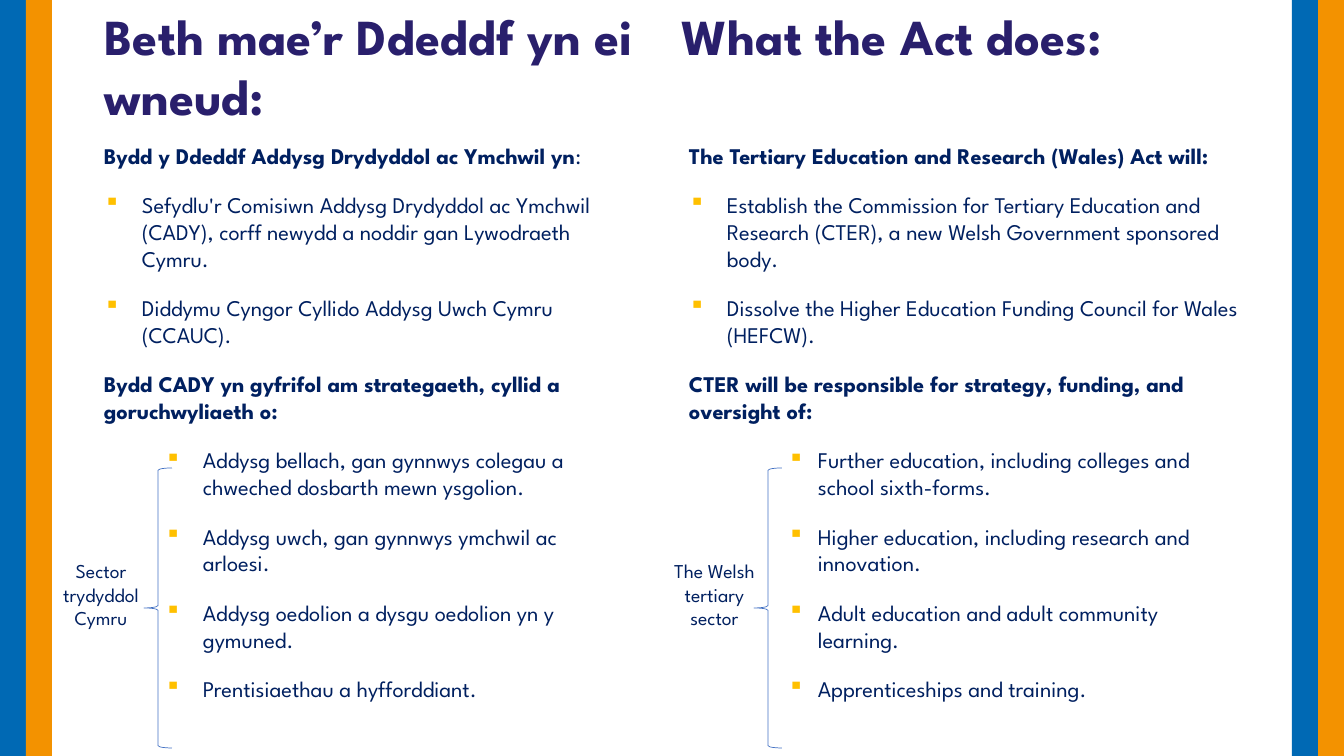
import pptx
import pptx.dml.color
import pptx.enum.shapes
import pptx.enum.text
import pptx.oxml.ns
import pptx.util
from dataclasses import dataclass
from lxml import etree

EMU_PER_PX = 914400 / 100.8
PAGE_WIDTH, PAGE_HEIGHT = 1344, 756
BAR_WIDTH = 26


@dataclass(frozen=True)
class Theme:
    font: str = "League Spartan"
    title: str = "291F6C"
    text: str = "002060"
    bullet: str = "FFC000"
    brace: str = "4472C4"
    blue: str = "0069B4"
    orange: str = "F39200"
    title_size: int = 36
    body_size: int = 16
    label_size: int = 14


THEME = Theme()

# Each body item: style (heading, point or sector), then its text
WELSH = {
    "title": "Beth mae’r Ddeddf yn ei wneud:",
    "title_at": (95, 0, 559, 173),
    "body_at": (94, 137, 527, 489),
    "sector_indent": (99, 38),
    "label": "Sector trydyddol Cymru",
    "label_at": (44, 554, 114, 82),
    "brace_left": 144,
    "body": [
        ("heading", "Bydd y Ddeddf Addysg Drydyddol ac Ymchwil yn", ":"),
        ("point", "Sefydlu'r Comisiwn Addysg Drydyddol ac Ymchwil (CADY), "
                  "corff newydd a noddir gan Lywodraeth Cymru."),
        ("point", "Diddymu Cyngor Cyllido Addysg Uwch Cymru (CCAUC)."),
        ("heading", "Bydd CADY yn gyfrifol am strategaeth, cyllid a goruchwyliaeth o:"),
        ("sector", "Addysg bellach, gan gynnwys colegau a chweched dosbarth mewn ysgolion."),
        ("sector", "Addysg uwch, gan gynnwys ymchwil ac arloesi."),
        ("sector", "Addysg oedolion a dysgu oedolion yn y gymuned."),
        ("sector", "Prentisiaethau a hyfforddiant."),
    ],
}
ENGLISH = {
    "title": "What the Act does:",
    "title_at": (672, 0, 654, 72),
    "body_at": (679, 137, 572, 524),
    "sector_indent": (129, 30),
    "label": "The Welsh tertiary sector",
    "label_at": (662, 554, 105, 105),
    "brace_left": 754,
    "body": [
        ("heading", "The Tertiary Education and Research (Wales) Act will:"),
        ("point", "Establish the Commission for Tertiary Education and Research (CTER), "
                  "a new Welsh Government sponsored body."),
        ("point", "Dissolve the Higher Education Funding Council for Wales (HEFCW)."),
        ("heading", "CTER will be responsible for strategy, funding, and oversight of:"),
        ("sector", "Further education, including colleges and school sixth-forms."),
        ("sector", "Higher education, including research and innovation."),
        ("sector", "Adult education and adult community learning."),
        ("sector", "Apprenticeships and training."),
    ],
}


def px(length):
    return pptx.util.Emu(round(length * EMU_PER_PX))


def rgb(code):
    return pptx.dml.color.RGBColor.from_string(code)


def apply_format(target, values):
    for name, value in values.items():
        setattr(target, name, value)


def add_span(para, text, size, color, bold=False):
    span = para.add_run()
    span.text = text
    apply_format(span.font, {"name": THEME.font, "size": pptx.util.Pt(size), "bold": bold})
    span.font.color.rgb = rgb(color)


def add_box(page, at):
    box = page.shapes.add_textbox(*map(px, at))
    apply_format(box.text_frame, {
        "word_wrap": True,
        "auto_size": pptx.enum.text.MSO_AUTO_SIZE.NONE,
        "vertical_anchor": pptx.enum.text.MSO_ANCHOR.TOP,
    })
    return box.text_frame


def add_title(page, at, text):
    add_span(add_box(page, at).paragraphs[0], text, THEME.title_size, THEME.title, True)


def add_label(page, at, text):
    para = add_box(page, at).paragraphs[0]
    apply_format(para, {"alignment": pptx.enum.text.PP_ALIGN.CENTER,
                        "space_after": pptx.util.Pt(6)})
    add_span(para, text, THEME.label_size, THEME.text)


def set_bullet(para, margin, hanging):
    tag = pptx.oxml.ns.qn
    properties = para._p.get_or_add_pPr()
    properties.set("marL", str(px(margin)))
    properties.set("indent", str(-px(hanging)))
    color = etree.SubElement(properties, tag("a:buClr"))
    etree.SubElement(color, tag("a:srgbClr"), val=THEME.bullet)
    etree.SubElement(properties, tag("a:buChar"), char="▪")


def add_body(page, at, items, sector_indent):
    frame = add_box(page, at)
    indents = {"point": (38, 38), "sector": sector_indent}
    for index, (style, text, *plain_tail) in enumerate(items):
        para = frame.add_paragraph() if index else frame.paragraphs[0]
        apply_format(para, {"space_before": pptx.util.Pt(10),
                            "space_after": pptx.util.Pt(6)})
        if style in indents:
            set_bullet(para, *indents[style])
        add_span(para, text, THEME.body_size, THEME.text, style == "heading")
        for tail in plain_tail:
            add_span(para, tail, THEME.body_size, THEME.text)


def add_bar(page, left, color):
    bar = page.shapes.add_shape(pptx.enum.shapes.MSO_SHAPE.RECTANGLE,
                                px(left), 0, px(BAR_WIDTH), px(PAGE_HEIGHT))
    bar.shadow.inherit = False
    bar.fill.solid()
    bar.fill.fore_color.rgb = rgb(color)
    bar.line.fill.background()


def add_brace(page, left):
    brace = page.shapes.add_shape(pptx.enum.shapes.MSO_SHAPE.LEFT_BRACE,
                                  *map(px, (left, 468, 28, 280)))
    brace.shadow.inherit = False
    brace.fill.background()
    brace.line.color.rgb = rgb(THEME.brace)
    brace.line.width = pptx.util.Pt(0.5)


def main():
    deck = pptx.Presentation()
    apply_format(deck, {"slide_width": px(PAGE_WIDTH), "slide_height": px(PAGE_HEIGHT)})
    page = deck.slides.add_slide(deck.slide_layouts[6])

    # Striped edges
    for left in (0, PAGE_WIDTH - 2 * BAR_WIDTH):
        add_bar(page, left, THEME.blue)
        add_bar(page, left + BAR_WIDTH, THEME.orange)

    # Welsh and English columns
    for column in (WELSH, ENGLISH):
        add_title(page, column["title_at"], column["title"])
        add_body(page, column["body_at"], column["body"], column["sector_indent"])
        add_label(page, column["label_at"], column["label"])
        add_brace(page, column["brace_left"])

    deck.save("out.pptx")


if __name__ == "__main__":
    main()
